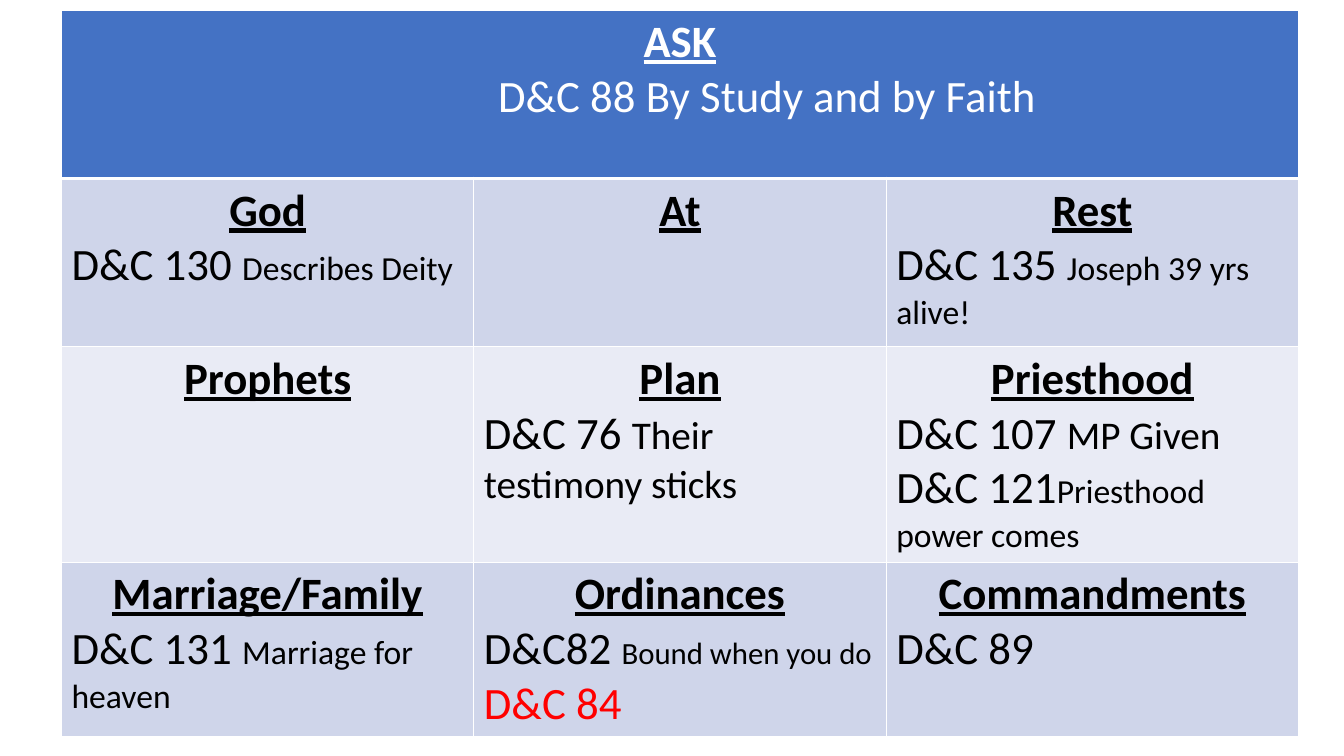
from lxml import etree
from pptx import Presentation
from pptx.dml.color import RGBColor
from pptx.enum.text import PP_ALIGN
from pptx.oxml.ns import qn
from pptx.util import Inches, Pt

CENTER, LEFT = PP_ALIGN.CENTER, PP_ALIGN.LEFT
FONT = "Calibri"
WHITE, BLACK, RED = "FFFFFF", "000000", "FF0000"
HEADER_FILL = "4472C4"
BAND_FILLS = ["CFD5EA", "E9EBF5"]
HEADING_SIZE = 32

TOPICS = [
    [
        ("God", [[("D&C 130 ", 32), ("Describes Deity", 24)]]),
        ("At", []),
        ("Rest", [[("D&C 135 ", 32), ("Joseph 39 yrs alive!", 24)]]),
    ],
    [
        ("Prophets", []),
        ("Plan", [[("D&C 76 ", 32), ("Their testimony sticks", 28)]]),
        ("Priesthood", [
            [("D&C 107 ", 32), ("MP Given", 28)],
            [("D&C 121", 32), ("Priesthood power comes", 24)],
        ]),
    ],
    [
        ("Marriage/Family", [[("D&C 131 ", 32), ("Marriage for heaven", 24)]]),
        ("Ordinances", [
            [("D&C82 ", 32), ("Bound when you do", 22)],
            [("D&C 84", 32, RED)],
        ]),
        ("Commandments", [[("D&C 89", 32)]]),
    ],
]


def rgb(value):
    return RGBColor.from_string(value)


def add_run(p, text, size, color, heading=False):
    r = p.add_run()
    r.text = text
    r.font.name = FONT
    r.font.size = Pt(size)
    r.font.color.rgb = rgb(color)
    r.font.bold = heading
    r.font.underline = heading


def set_borders(cell, top=1, bottom=1):
    tcPr = cell._tc.get_or_add_tcPr()
    widths = {"a:lnL": 1, "a:lnR": 1, "a:lnT": top, "a:lnB": bottom}
    for position, (tag, width) in enumerate(widths.items()):
        ln = etree.Element(qn(tag), w=str(Pt(width)))
        fill = etree.SubElement(ln, qn("a:solidFill"))
        etree.SubElement(fill, qn("a:srgbClr"), val=WHITE)
        tcPr.insert(position, ln)


def fill_cell(cell, heading, lines, fill, color):
    cell.fill.solid()
    cell.fill.fore_color.rgb = rgb(fill)
    tf = cell.text_frame
    p = tf.paragraphs[0]
    p.alignment = CENTER
    add_run(p, heading, HEADING_SIZE, color, heading=True)
    for line in lines:
        p = tf.add_paragraph()
        p.alignment = LEFT
        for text, size, *accent in line:
            add_run(p, text, size, accent[0] if accent else color)


def add_topic_table(s):
    frame = s.shapes.add_table(4, 3, Inches(0.61), Inches(0.1),
                               Inches(12.27), Inches(6.68))
    frame.height = Inches(7.2)
    table = frame.table

    header = table.cell(0, 0)
    header.merge(table.cell(0, 2))
    fill_cell(header, "ASK", [[("D&C 88 By Study and by Faith", 32)]],
              HEADER_FILL, WHITE)
    subtitle = header.text_frame.paragraphs[1]
    subtitle._p.get_or_add_pPr().set("marL", str(Inches(4.23)))
    for column in range(3):
        set_borders(table.cell(0, column), bottom=3)

    for row, topics in enumerate(TOPICS, start=1):
        for column, (heading, lines) in enumerate(topics):
            cell = table.cell(row, column)
            fill_cell(cell, heading, lines, BAND_FILLS[(row - 1) % 2], BLACK)
            set_borders(cell, top=3 if row == 1 else 1)


def main():
    prs = Presentation()
    prs.slide_width = Inches(13.33)
    prs.slide_height = Inches(7.5)
    s = prs.slides.add_slide(prs.slide_layouts[6])
    add_topic_table(s)
    prs.save("out.pptx")


if __name__ == "__main__":
    main()
